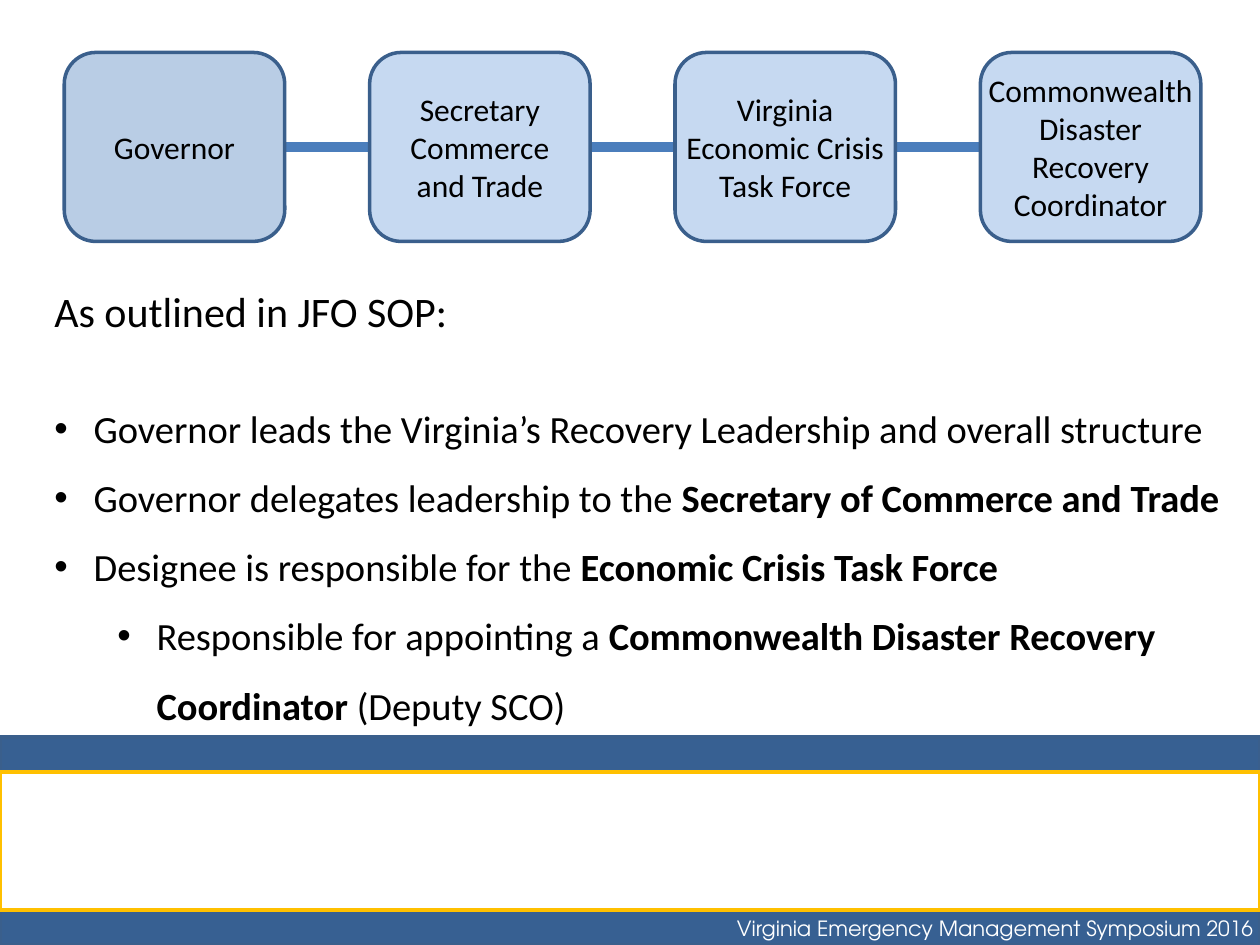
import pptx
import pptx.dml.color
import pptx.enum.shapes
import pptx.enum.text
import pptx.oxml
import pptx.oxml.ns
import pptx.util

Pt = pptx.util.Pt
SHAPES = pptx.enum.shapes.MSO_SHAPE
ALIGN = pptx.enum.text.PP_ALIGN
ANCHOR = pptx.enum.text.MSO_ANCHOR

BLUE = "376092"
OUTLINE = "3A5F8C"
LIGHT_BLUE = "C6D9F1"

ROLES = [
    ("Governor", "B9CDE5"),
    ("Secretary\vCommerce\vand Trade", LIGHT_BLUE),
    ("Virginia\vEconomic Crisis\vTask Force", LIGHT_BLUE),
    ("Commonwealth\vDisaster\vRecovery\vCoordinator", LIGHT_BLUE),
]

# Each bullet: level, then (text, bold) pairs
BULLETS = [
    (0, [("Governor leads the Virginia’s Recovery Leadership and overall structure", False)]),
    (0, [("Governor delegates leadership to the ", False),
         ("Secretary of Commerce and Trade", True)]),
    (0, [("Designee is responsible for the ", False),
         ("Economic Crisis Task Force", True)]),
    (1, [("Responsible for appointing a ", False),
         ("Commonwealth Disaster Recovery Coordinator ", True),
         ("(Deputy SCO)", False)]),
]


def color(hex_string):
    return pptx.dml.color.RGBColor.from_string(hex_string)


def place(shape, left, top, width, height):
    shape.left, shape.top = Pt(left), Pt(top)
    shape.width, shape.height = Pt(width), Pt(height)


def write(paragraph, text, size=18, font="Calibri", fill="000000", bold=False, align=ALIGN.LEFT):
    """Append formatted text; a vertical tab becomes a line break."""
    paragraph.alignment = align
    for index, part in enumerate(text.split("\v")):
        if index:
            paragraph.add_line_break()
        run = paragraph.add_run()
        run.text = part
        run.font.size = Pt(size)
        run.font.name = font
        run.font.bold = bold
        run.font.color.rgb = color(fill)


def set_frame(shape, wrap=True, anchor=ANCHOR.TOP):
    frame = shape.text_frame
    frame.auto_size = pptx.enum.text.MSO_AUTO_SIZE.NONE
    frame.word_wrap = wrap
    frame.vertical_anchor = anchor
    return frame


def add_box(slide, kind, bounds, fill, line, line_width=2):
    shape = slide.shapes.add_shape(kind, *[Pt(value) for value in bounds])
    shape.shadow.inherit = False
    shape.fill.solid()
    shape.fill.fore_color.rgb = color(fill)
    shape.line.color.rgb = color(line)
    shape.line.width = Pt(line_width)
    return shape


def add_link(slide, left, right, height):
    connector = slide.shapes.add_connector(
        pptx.enum.shapes.MSO_CONNECTOR.STRAIGHT, Pt(left), Pt(height), Pt(right), Pt(height))
    connector.line.color.rgb = color("4B7EBC")
    connector.line.width = Pt(6)
    properties = connector.element.spPr
    properties.append(pptx.oxml.parse_xml(
        f"<a:effectLst {pptx.oxml.ns.nsdecls('a')}/>"))
    return connector


def add_chain(slide):
    left, top, width, height, pitch = 36.7, 30, 126, 108, 174.5
    last_left = left + pitch * (len(ROLES) - 1)
    # The link comes first so that it runs behind the middle boxes
    link = add_link(slide, left + width, last_left, top + height / 2)
    boxes = []
    for index, (label, fill) in enumerate(ROLES):
        box = add_box(slide, SHAPES.ROUNDED_RECTANGLE,
                      (left + index * pitch, top, width, height), fill, OUTLINE)
        frame = set_frame(box, wrap=False, anchor=ANCHOR.MIDDLE)
        write(frame.paragraphs[0], label, align=ALIGN.CENTER)
        boxes.append(box)
    link.begin_connect(boxes[0], 3)
    link.end_connect(boxes[-1], 1)


def add_bullet(paragraph, level, runs):
    paragraph.level = level
    paragraph.line_spacing = 1.5
    paragraph.space_before = Pt(0)
    properties = paragraph._p.get_or_add_pPr()
    properties.set("marL", str(Pt(22.5 + 36 * level)))
    properties.set("indent", str(Pt(-22.5)))
    for tag in ('buFont typeface="Arial"', 'buChar char="•"'):
        properties.append(pptx.oxml.parse_xml(
            f"<a:{tag} {pptx.oxml.ns.nsdecls('a')}/>"))
    for text, bold in runs:
        write(paragraph, text, size=22, bold=bold)


def fill_placeholders(slide):
    title, body = slide.shapes.title, slide.placeholders[1]
    place(title, 23.8, 159.6, 684, 38)
    write(set_frame(title).paragraphs[0], "As outlined in JFO SOP:", size=24)

    place(body, 23.8, 214.5, 684, 207)
    frame = set_frame(body)
    for index, (level, runs) in enumerate(BULLETS):
        paragraph = frame.add_paragraph() if index else frame.paragraphs[0]
        add_bullet(paragraph, level, runs)


def add_footer(slide):
    for top in (519.8, 421.2):
        add_box(slide, SHAPES.RECTANGLE, (0, top, 720, 20.2), BLUE, OUTLINE)
    add_box(slide, SHAPES.RECTANGLE, (0, 441.4, 720, 78.4), "FFFFFF", "FFC000", 2.25)
    caption = slide.shapes.add_textbox(Pt(414), Pt(519.4), Pt(306), Pt(20.6))
    frame = set_frame(caption, wrap=False)
    frame.margin_right = 0
    write(frame.paragraphs[0], "Virginia Emergency Management Symposium 2016",
          size=12, font="TeX Gyre Adventor", fill="FFFFFF")


def main():
    presentation = pptx.Presentation()
    presentation.slide_width, presentation.slide_height = Pt(720), Pt(540)
    slide = presentation.slides.add_slide(presentation.slide_layouts[1])
    # Bands along the bottom
    add_footer(slide)
    # Chain of leadership
    add_chain(slide)
    # Heading and bullets
    fill_placeholders(slide)
    presentation.save("out.pptx")


if __name__ == "__main__":
    main()
